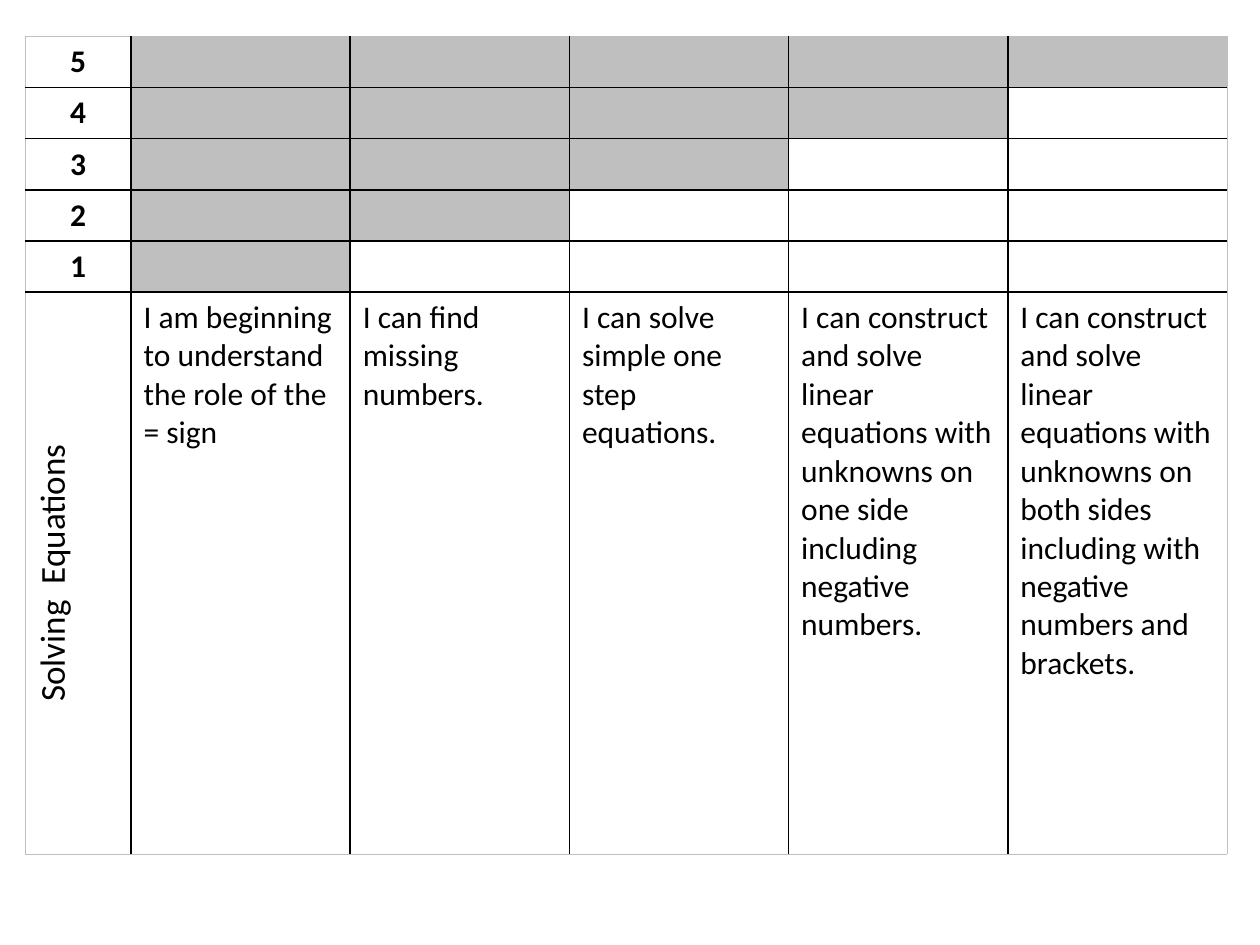
from pptx import Presentation
from pptx.dml.color import RGBColor as Rgb
from pptx.enum.text import PP_ALIGN as Align
from pptx.oxml import parse_xml
from pptx.oxml.ns import nsdecls
from pptx.util import Inches, Pt

HUES = {"ink": "000000", "shade": "BFBFBF", "paper": "FFFFFF"}
LEVELS = 5
GOALS = [
    "I am beginning to understand the role of the = sign",
    "I can find missing numbers.",
    "I can solve simple one step equations.",
    "I can construct and solve linear equations with unknowns on one side "
    "including negative numbers.",
    "I can construct and solve linear equations with unknowns on both sides "
    "including with negative numbers and brackets.",
]


class Deck:
    """Holds the style and the current slide."""

    def __init__(self, font="Calibri", size=18):
        self.font, self.size = font, size
        self.prs = Presentation()
        self.prs.slide_width = Inches(10)
        self.prs.slide_height = Inches(7.5)
        self.slide = self.prs.slides.add_slide(self.prs.slide_layouts[6])

    def table(self, left, top, cols, rows):
        frame = self.slide.shapes.add_table(
            len(rows), len(cols), Inches(left), Inches(top),
            Inches(sum(cols)), Inches(sum(rows)))
        grid = frame.table
        grid.first_row = grid.horz_banding = False
        for col, width in zip(grid.columns, cols):
            col.width = Inches(width)
        for row, height in zip(grid.rows, rows):
            row.height = Inches(height)
        return grid

    def cell(self, cell, hue="paper"):
        cell.fill.solid()
        cell.fill.fore_color.rgb = Rgb.from_string(HUES[hue])

    def text(self, cell, words, size=None, bold=False, align=Align.LEFT):
        cell.text_frame.text = words
        para = cell.text_frame.paragraphs[0]
        para.alignment = align
        for run in para.runs:
            run.font.name = self.font
            run.font.size = Pt(size or self.size)
            run.font.bold = bold
            run.font.color.rgb = Rgb.from_string(HUES["ink"])

    def edges(self, cell, outer):
        """Rule the cell: thin grey on the table's rim, black inside."""
        props = cell._tc.get_or_add_tcPr()
        for spot, side in enumerate("LRTB"):
            hue, width = ("shade", 0.5) if side in outer else ("ink", 1)
            props.insert(spot, parse_xml(
                f'<a:ln{side} {nsdecls("a")} w="{Pt(width)}"><a:solidFill>'
                f'<a:srgbClr val="{HUES[hue]}"/></a:solidFill></a:ln{side}>'))


def main():
    deck = Deck()
    last = LEVELS
    grid = deck.table(0.2, 0.29, [0.84] + [1.74] * LEVELS,
                      [0.4] * LEVELS + [4.46])

    # Stepped shading and rules
    for r in range(last + 1):
        for c in range(last + 1):
            cell = grid.cell(r, c)
            done = 0 < c <= last - r
            if r == 0 and c == last:
                done = True
            deck.cell(cell, "shade" if done else "paper")
            rim = {"L": c == 0, "R": c == last, "T": r == 0, "B": r == last}
            deck.edges(cell, [side for side in rim if rim[side]])

    # Level numbers, highest first
    for r in range(LEVELS):
        deck.text(grid.cell(r, 0), str(LEVELS - r), bold=True,
                  align=Align.CENTER)

    # Topic, read upwards
    topic = grid.cell(last, 0)
    deck.text(topic, "Solving  Equations", size=20, align=Align.CENTER)
    topic._tc.get_or_add_tcPr().set("vert", "vert270")

    # Goals
    for c, goal in enumerate(GOALS, 1):
        deck.text(grid.cell(last, c), goal)

    deck.prs.save("out.pptx")


if __name__ == "__main__":
    main()
